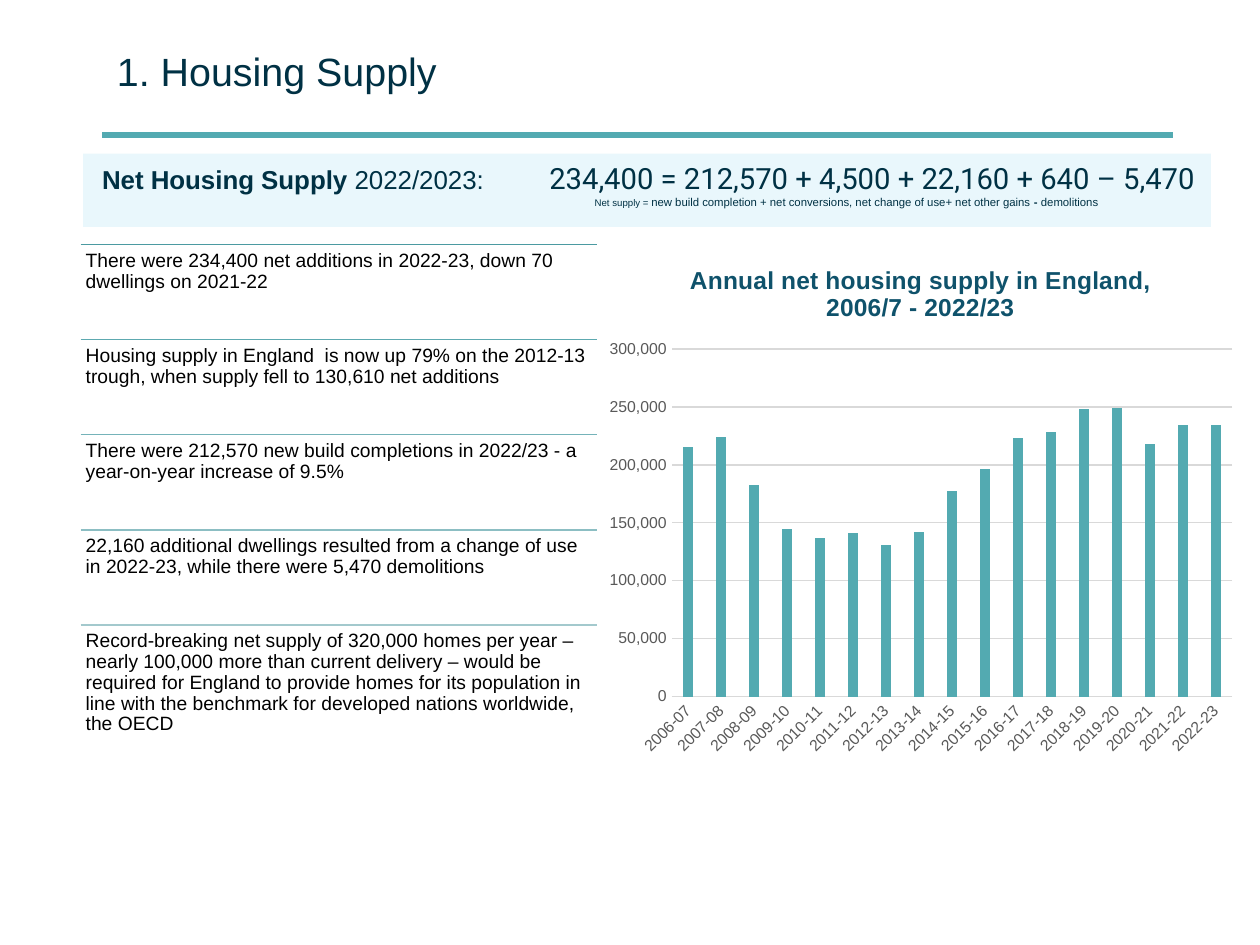
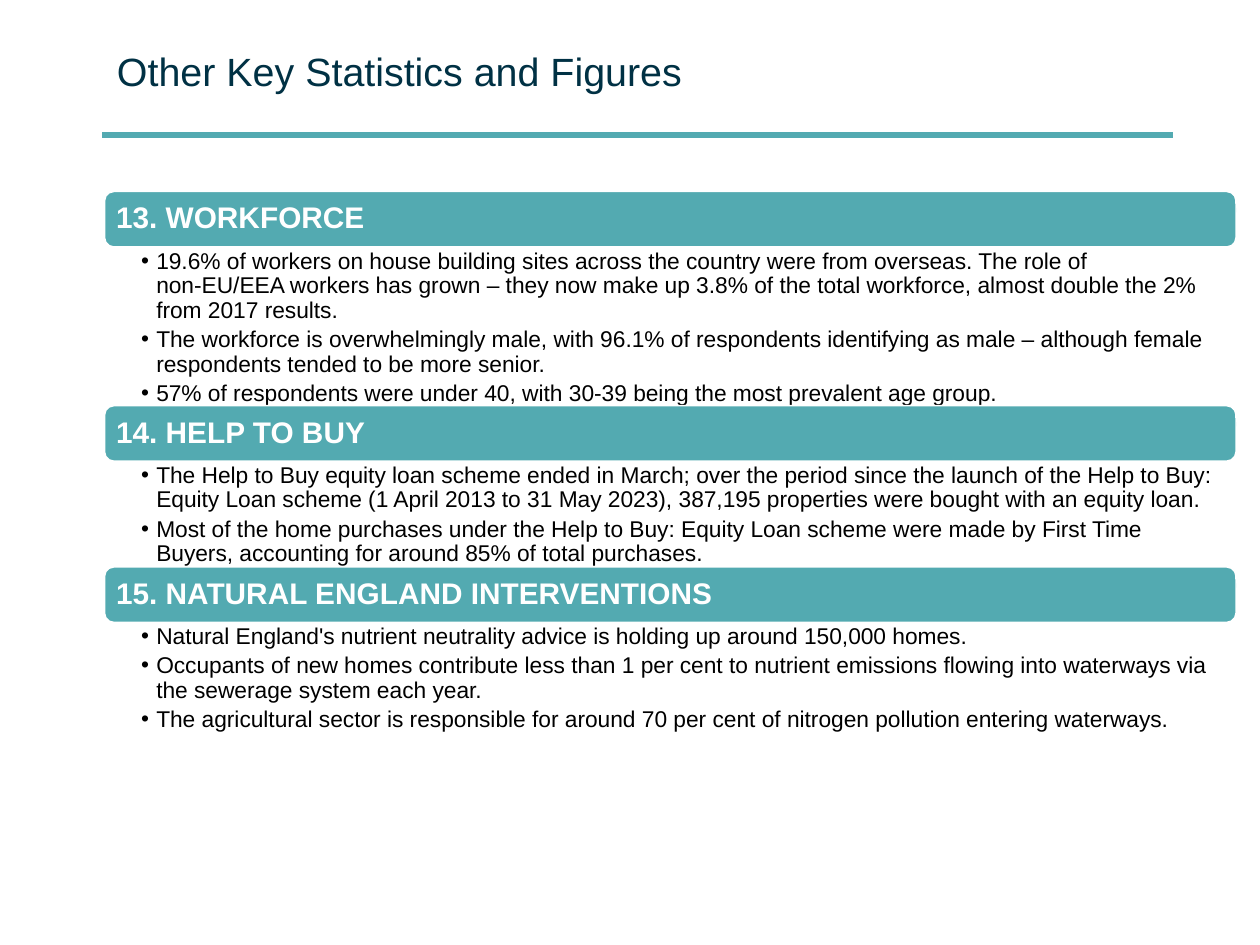
from lxml.etree import SubElement
from pptx import Presentation
from pptx.chart.data import CategoryChartData
from pptx.dml.color import RGBColor
from pptx.enum.chart import XL_CHART_TYPE, XL_TICK_MARK
from pptx.enum.shapes import MSO_CONNECTOR, MSO_SHAPE
from pptx.enum.text import MSO_ANCHOR, PP_ALIGN
from pptx.oxml import parse_xml
from pptx.oxml.ns import nsdecls, qn
from pptx.util import Inches, Pt

TEAL = RGBColor(0x53, 0xAA, 0xB1)
NAVY = RGBColor(0x00, 0x31, 0x44)
PALE_BLUE = RGBColor(0xE9, 0xF7, 0xFC)
CHART_TITLE_BLUE = RGBColor(0x0F, 0x52, 0x6B)
GREY = RGBColor(0x59, 0x59, 0x59)
LIGHT_GREY = RGBColor(0xD9, 0xD9, 0xD9)
BLACK = RGBColor(0, 0, 0)
WHITE = RGBColor(0xFF, 0xFF, 0xFF)
RULE_COLOURS = [RGBColor.from_string(code) for code in
                ("4B9AA1", "5DA9B0", "75B3B9", "8CBEC3", "A3C9CD")]

TITLE_FONT = {"name": "Arial", "size": Pt(22.5), "color": NAVY}
BAND_FONT = {"name": "Arial", "size": Pt(14.8), "color": NAVY}
SUM_FONT = {"name": "Roboto", "size": Pt(16.7), "color": NAVY}
NOTE_FONT = {"name": "Arial", "size": Pt(6.5), "color": NAVY}
FACT_FONT = {"name": "Arial", "size": Pt(11), "color": BLACK}
HEADING_FONT = {"name": "Arial", "size": Pt(17), "color": WHITE, "bold": True}
BULLET_FONT = {"name": "Arial", "size": Pt(13), "color": BLACK}
AXIS_FONT = {"name": "Arial", "size": Pt(9), "color": GREY}
CHART_TITLE_FONT = {"name": "Arial", "size": Pt(14), "color": CHART_TITLE_BLUE, "bold": True}

# Each band line: tab stop in inches, then its (text, font) runs
BAND_LINES = [
    (3.55, [("Net Housing Supply ", {**BAND_FONT, "bold": True}),
            ("2022/2023:\t", BAND_FONT),
            ("234,400 = 212,570 + 4,500 + 22,160 + 640 – 5,470", SUM_FONT)]),
    (3.91, [("\tNet supply = ", {**NOTE_FONT, "size": Pt(5.5)}),
            ("new build completion + net conversions, net change of use+ net other gains ",
             NOTE_FONT),
            ("- ", {**NOTE_FONT, "bold": True}),
            ("demolitions", NOTE_FONT)]),
]
FACTS = [
    "There were 234,400 net additions in 2022-23, down 70 dwellings on 2021-22",
    "Housing supply in England  is now up 79% on the 2012-13 trough, when supply fell to "
    "130,610 net additions",
    "There were 212,570 new build completions in 2022/23 - a year-on-year increase of 9.5%",
    "22,160 additional dwellings resulted from a change of use in 2022-23, while there were "
    "5,470 demolitions",
    "Record-breaking net supply of 320,000 homes per year – nearly 100,000 more than current "
    "delivery – would be required for England to provide homes for its population in line with "
    "the benchmark for developed nations worldwide, the OECD",
]
CHART_TITLE = "Annual net housing supply in England, 2006/7 - 2022/23"
CHART_WIDTH, CHART_HEIGHT = 5.14, 4.15
FIRST_YEAR = 2006
NET_SUPPLY = [215000, 224000, 183000, 145000, 137000, 141000, 131000, 142000, 177000,
              196000, 223000, 228000, 248000, 249000, 218000, 234000, 234000]

# Each section: heading, height of its text in inches, bullets
SECTIONS = [
    ("13. WORKFORCE", 1.26, [
        "19.6% of workers on house building sites across the country were from overseas. The "
        "role of non-EU/EEA workers has grown – they now make up 3.8% of the total workforce, "
        "almost double the 2% from 2017 results.",
        "The workforce is overwhelmingly male, with 96.1% of respondents identifying as male – "
        "although female respondents tended to be more senior.",
        "57% of respondents were under 40, with 30-39 being the most prevalent age group.",
    ]),
    ("14. HELP TO BUY", 0.84, [
        "The Help to Buy equity loan scheme ended in March; over the period since the launch of "
        "the Help to Buy: Equity Loan scheme (1 April 2013 to 31 May 2023), 387,195 properties "
        "were bought with an equity loan.",
        "Most of the home purchases under the Help to Buy: Equity Loan scheme were made by First "
        "Time Buyers, accounting for around 85% of total purchases.",
    ]),
    ("15. NATURAL ENGLAND INTERVENTIONS", 0.89, [
        "Natural England's nutrient neutrality advice is holding up around 150,000 homes.",
        "Occupants of new homes contribute less than 1 per cent to nutrient emissions flowing "
        "into waterways via the sewerage system each year.",
        "The agricultural sector is responsible for around 70 per cent of nitrogen pollution "
        "entering waterways.",
    ]),
]


def set_values(target, values):
    for name, value in values.items():
        if name == "color":
            target.color.rgb = value
        else:
            setattr(target, name, value)


def set_frame(shape, insets=(0.1, 0.05, 0.1, 0.05), anchor=MSO_ANCHOR.TOP):
    """Prepare the text frame; insets are left, top, right, bottom in inches."""
    frame = shape.text_frame
    sides = ("margin_left", "margin_top", "margin_right", "margin_bottom")
    set_values(frame, {"word_wrap": True, "vertical_anchor": anchor,
                       **dict(zip(sides, map(Inches, insets)))})
    return frame


def add_span(para, text, font):
    span = para.add_run()
    span.text = text
    set_values(span.font, font)


def write(frame, texts, font, line_spacing=0.9, gap=0, bullet=None):
    """Write one paragraph per text, with an optional bullet and a gap in points."""
    for index, text in enumerate(texts):
        para = frame.add_paragraph() if index else frame.paragraphs[0]
        if bullet:
            properties = para._p.get_or_add_pPr()
            properties.set("marL", str(Inches(0.12)))
            properties.set("indent", str(-Inches(0.12)))
            SubElement(properties, qn("a:buFont")).set("typeface", font["name"])
            SubElement(properties, qn("a:buChar")).set("char", bullet)
        set_values(para, {"alignment": PP_ALIGN.LEFT, "line_spacing": line_spacing,
                          "space_after": Pt(gap)})
        add_span(para, text, font)


def add_text_box(page, place, insets=(0.1, 0.05, 0.1, 0.05), anchor=MSO_ANCHOR.TOP):
    box = page.shapes.add_textbox(*map(Inches, place))
    return set_frame(box, insets, anchor)


def add_panel(page, kind, place, fill, outline=None):
    panel = page.shapes.add_shape(kind, *map(Inches, place))
    panel.shadow.inherit = False
    panel.fill.solid()
    panel.fill.fore_color.rgb = fill
    if outline:
        set_values(panel.line, {"color": outline, "width": Pt(0.85)})
    else:
        panel.line.fill.background()
    return panel


def add_rule(page, left, right, top, colour, width):
    rule = page.shapes.add_connector(MSO_CONNECTOR.STRAIGHT, Inches(left), Inches(top),
                                     Inches(right), Inches(top))
    set_values(rule.line, {"color": colour, "width": Pt(width)})
    SubElement(rule._element.spPr, qn("a:effectLst"))


def add_page(deck, title):
    page = deck.slides.add_slide(deck.slide_layouts[6])
    add_rule(page, 0.81, 9.31, 1.07, TEAL, 3.5)
    frame = add_text_box(page, (0.83, 0.07, 8.5, 0.98), anchor=MSO_ANCHOR.MIDDLE)
    write(frame, [title], TITLE_FONT, line_spacing=1.0)
    return page


def add_supply_band(page):
    band = add_panel(page, MSO_SHAPE.RECTANGLE, (0.66, 1.22, 8.95, 0.58), PALE_BLUE)
    frame = set_frame(band, (0.15, 0.05, 0.02, 0.05))
    for index, (tab_stop, spans) in enumerate(BAND_LINES):
        para = frame.add_paragraph() if index else frame.paragraphs[0]
        tabs = SubElement(para._p.get_or_add_pPr(), qn("a:tabLst"))
        tab = SubElement(tabs, qn("a:tab"))
        tab.set("pos", str(Inches(tab_stop)))
        tab.set("algn", "l")
        para.alignment = PP_ALIGN.LEFT
        for text, font in spans:
            add_span(para, text, font)


def add_facts(page):
    left, width, first_top, last_top = 0.64, 4.1, 1.94, 4.96
    pitch = (last_top - first_top) / (len(FACTS) - 1)
    for index, (fact, colour) in enumerate(zip(FACTS, RULE_COLOURS)):
        top = first_top + index * pitch
        height = 1.24 if fact == FACTS[-1] else pitch
        add_rule(page, left, left + width, top, colour, 0.85)
        frame = add_text_box(page, (left, top, width, height), (0.04, 0.05, 0.05, 0.05))
        write(frame, [fact], FACT_FONT)


def manual_layout(left, top, width=None, height=None):
    """Return a chart layout element for a place given in inches."""
    target = '<c:layoutTarget val="inner"/>' if width else ""
    size = (f'<c:w val="{width / CHART_WIDTH}"/><c:h val="{height / CHART_HEIGHT}"/>'
            if width else "")
    return parse_xml(f'<c:layout {nsdecls("c")}><c:manualLayout>{target}'
                     '<c:xMode val="edge"/><c:yMode val="edge"/>'
                     f'<c:x val="{left / CHART_WIDTH}"/><c:y val="{top / CHART_HEIGHT}"/>'
                     f'{size}</c:manualLayout></c:layout>')


def place_part(part, layout, before):
    """Give a chart part its layout, ahead of the first element named in before."""
    for old in part.findall(qn("c:layout")):
        part.remove(old)
    part.find(qn(before)).addprevious(layout)


def add_supply_chart(page):
    data = CategoryChartData(number_format="#,##0")
    data.categories = [f"{year}-{(year + 1) % 100:02d}"
                       for year in range(FIRST_YEAR, FIRST_YEAR + len(NET_SUPPLY))]
    data.add_series("Series 1", NET_SUPPLY)
    place = map(Inches, (4.74, 1.94, CHART_WIDTH, CHART_HEIGHT))
    chart = page.shapes.add_chart(XL_CHART_TYPE.COLUMN_CLUSTERED, *place, data).chart
    chart.has_legend = False
    set_values(chart.font, {"name": "Arial", "size": Pt(10)})

    chart.has_title = True
    add_span(chart.chart_title.text_frame.paragraphs[0], CHART_TITLE, CHART_TITLE_FONT)
    chart.chart_title.include_in_layout = False
    place_part(chart.chart_title._element, manual_layout(0.7, 0.12), "c:overlay")
    plot_area = chart._chartSpace.chart.plotArea
    place_part(plot_area, manual_layout(0.59, 0.83, 4.45, 2.76), "c:barChart")

    plot = chart.plots[0]
    set_values(plot, {"gap_width": 219, "overlap": -27, "vary_by_categories": False})
    columns = plot.series[0].format.fill
    columns.solid()
    columns.fore_color.rgb = TEAL

    years, amounts = chart.category_axis, chart.value_axis
    for axis in (years, amounts):
        axis.major_tick_mark = axis.minor_tick_mark = XL_TICK_MARK.NONE
        set_values(axis.tick_labels.font, AXIS_FONT)
    years._element.find(qn("c:txPr")).find(qn("a:bodyPr")).set("rot", "-2700000")
    set_values(amounts, {"minimum_scale": 0, "maximum_scale": 300000, "major_unit": 50000})
    set_values(amounts.tick_labels, {"number_format": "#,##0", "number_format_is_linked": False})
    amounts.format.line.fill.background()
    for line in (years.format.line, amounts.major_gridlines.format.line):
        set_values(line, {"color": LIGHT_GREY, "width": Pt(0.75)})


def add_sections(page):
    left, top, width, heading_height = 0.83, 1.52, 8.98, 0.44
    for heading, text_height, bullets in SECTIONS:
        bar = add_panel(page, MSO_SHAPE.ROUNDED_RECTANGLE,
                        (left, top, width, heading_height), TEAL, WHITE)
        write(set_frame(bar, (0.07,) * 4, MSO_ANCHOR.MIDDLE), [heading], HEADING_FONT)
        top += heading_height
        frame = add_text_box(page, (left, top, width, text_height), (0.29, 0.02, 0.13, 0.02))
        write(frame, bullets, BULLET_FONT, gap=2.6, bullet="•")
        top += text_height


def main():
    deck = Presentation()
    set_values(deck, {"slide_width": Inches(10), "slide_height": Inches(7.5)})
    supply_page = add_page(deck, "1. Housing Supply")
    add_supply_band(supply_page)
    add_facts(supply_page)
    add_supply_chart(supply_page)
    add_sections(add_page(deck, "Other Key Statistics and Figures"))
    deck.save("out.pptx")


if __name__ == "__main__":
    main()
